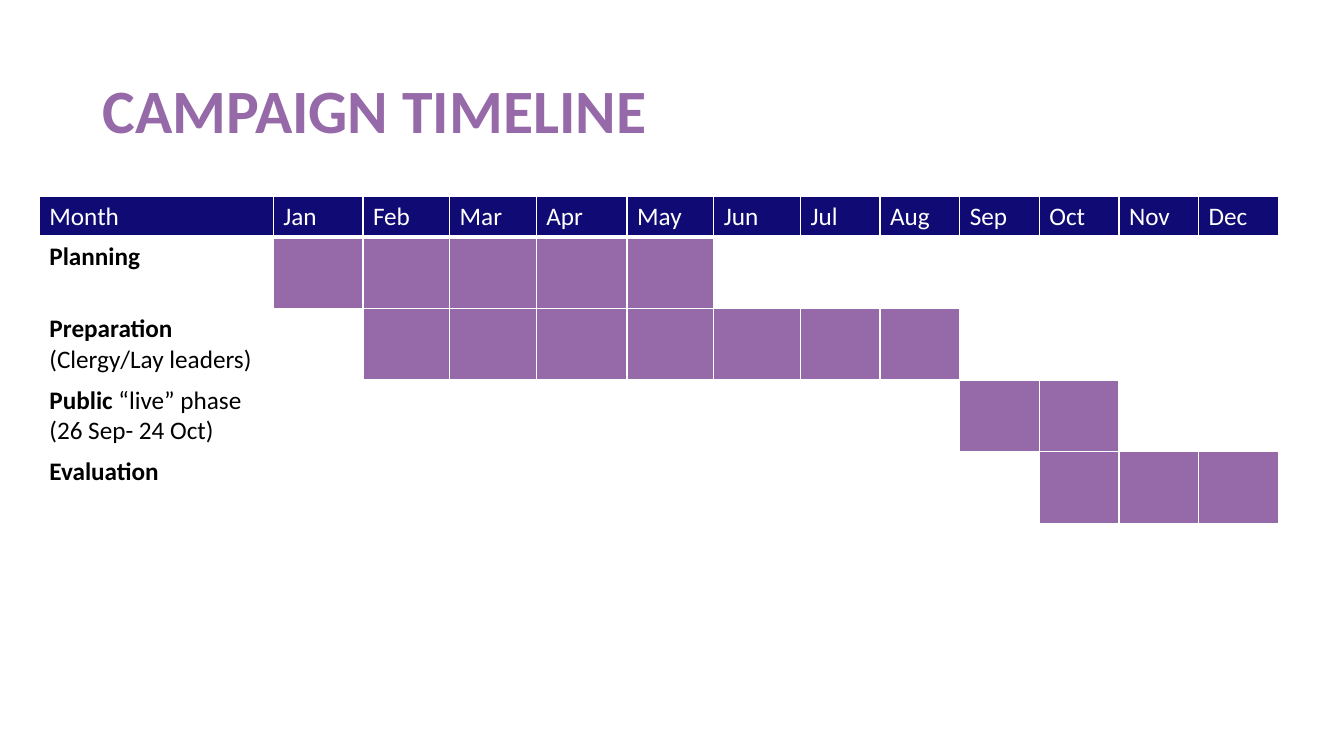
import pptx
import pptx.dml.color
import pptx.enum.text
import pptx.oxml
import pptx.oxml.ns
import pptx.util
from pptx.util import Inches

COLORS = {"navy": "100B74", "purple": "9669A9", "white": "FFFFFF", "black": "000000"}
MONTHS = ["Jan", "Feb", "Mar", "Apr", "May", "Jun", "Jul", "Aug", "Sep", "Oct", "Nov", "Dec"]
PHASES = [
    ("Planning", "", "Jan", "May"),
    ("Preparation", " (Clergy/Lay leaders)", "Feb", "Aug"),
    ("Public", " “live” phase (26 Sep- 24 Oct)", "Sep", "Oct"),
    ("Evaluation", "", "Oct", "Dec"),
]
COLUMN_WIDTHS = [2.32, 0.89, 0.86, 0.86, 0.9, 0.86, 0.86] + [0.79] * 6
ROW_HEIGHTS = [0.4] + [0.71] * len(PHASES)
BORDER_WIDTHS = {"a:lnL": 1, "a:lnR": 1, "a:lnT": 1, "a:lnB": 1}
HEADER_BORDER_WIDTHS = {**BORDER_WIDTHS, "a:lnB": 3}


def rgb(name):
    return pptx.dml.color.RGBColor.from_string(COLORS[name])


def add_run(paragraph, text, color, size=18, bold=False):
    run = paragraph.add_run()
    run.text = text
    formats = {"name": "Calibri", "size": pptx.util.Pt(size), "bold": bold}
    for attribute, value in formats.items():
        setattr(run.font, attribute, value)
    run.font.color.rgb = rgb(color)


def add_title(slide, text):
    title = slide.shapes.add_textbox(Inches(0.92), Inches(0.4), Inches(11.5), Inches(1.45))
    formats = {"word_wrap": True, "vertical_anchor": pptx.enum.text.MSO_ANCHOR.MIDDLE}
    for attribute, value in formats.items():
        setattr(title.text_frame, attribute, value)
    paragraph = title.text_frame.paragraphs[0]
    paragraph.line_spacing = 0.9
    add_run(paragraph, text, "purple", size=44, bold=True)


def set_borders(cell, widths):
    properties = cell._tc.get_or_add_tcPr()
    for position, (tag, width) in enumerate(widths.items()):
        line = pptx.oxml.parse_xml(
            f'<{tag} {pptx.oxml.ns.nsdecls("a")} w="{pptx.util.Pt(width)}"><a:solidFill>'
            f'<a:srgbClr val="{COLORS["white"]}"/></a:solidFill></{tag}>'
        )
        properties.insert(position, line)


def format_cell(cell, fill=None, border_widths=BORDER_WIDTHS):
    if fill:
        cell.fill.solid()
        cell.fill.fore_color.rgb = rgb(fill)
    else:
        cell.fill.background()
    set_borders(cell, border_widths)


def add_header(table):
    for column, label in enumerate(["Month"] + MONTHS):
        cell = table.cell(0, column)
        format_cell(cell, "navy", HEADER_BORDER_WIDTHS)
        add_run(cell.text_frame.paragraphs[0], label, "white")


def add_phase(table, row, phase):
    name, detail, first_month, last_month = phase
    label_cell = table.cell(row, 0)
    format_cell(label_cell)
    paragraph = label_cell.text_frame.paragraphs[0]
    add_run(paragraph, name, "black", bold=True)
    if detail:
        add_run(paragraph, detail, "black")
    active = range(MONTHS.index(first_month), MONTHS.index(last_month) + 1)
    for month in range(len(MONTHS)):
        format_cell(table.cell(row, month + 1), "purple" if month in active else None)


def add_timeline(slide):
    frame = slide.shapes.add_table(
        len(ROW_HEIGHTS), len(COLUMN_WIDTHS), Inches(0.39), Inches(1.95),
        Inches(sum(COLUMN_WIDTHS)), Inches(sum(ROW_HEIGHTS)),
    )
    table = frame.table
    table.horz_banding = False
    for column, width in zip(table.columns, COLUMN_WIDTHS):
        column.width = Inches(width)
    for row, height in zip(table.rows, ROW_HEIGHTS):
        row.height = Inches(height)
    add_header(table)
    for row, phase in enumerate(PHASES, start=1):
        add_phase(table, row, phase)


def main():
    presentation = pptx.Presentation()
    presentation.slide_width = Inches(13.33)
    presentation.slide_height = Inches(7.5)
    slide = presentation.slides.add_slide(presentation.slide_layouts[6])
    add_title(slide, "CAMPAIGN TIMELINE")
    add_timeline(slide)
    presentation.save("out.pptx")


if __name__ == "__main__":
    main()
